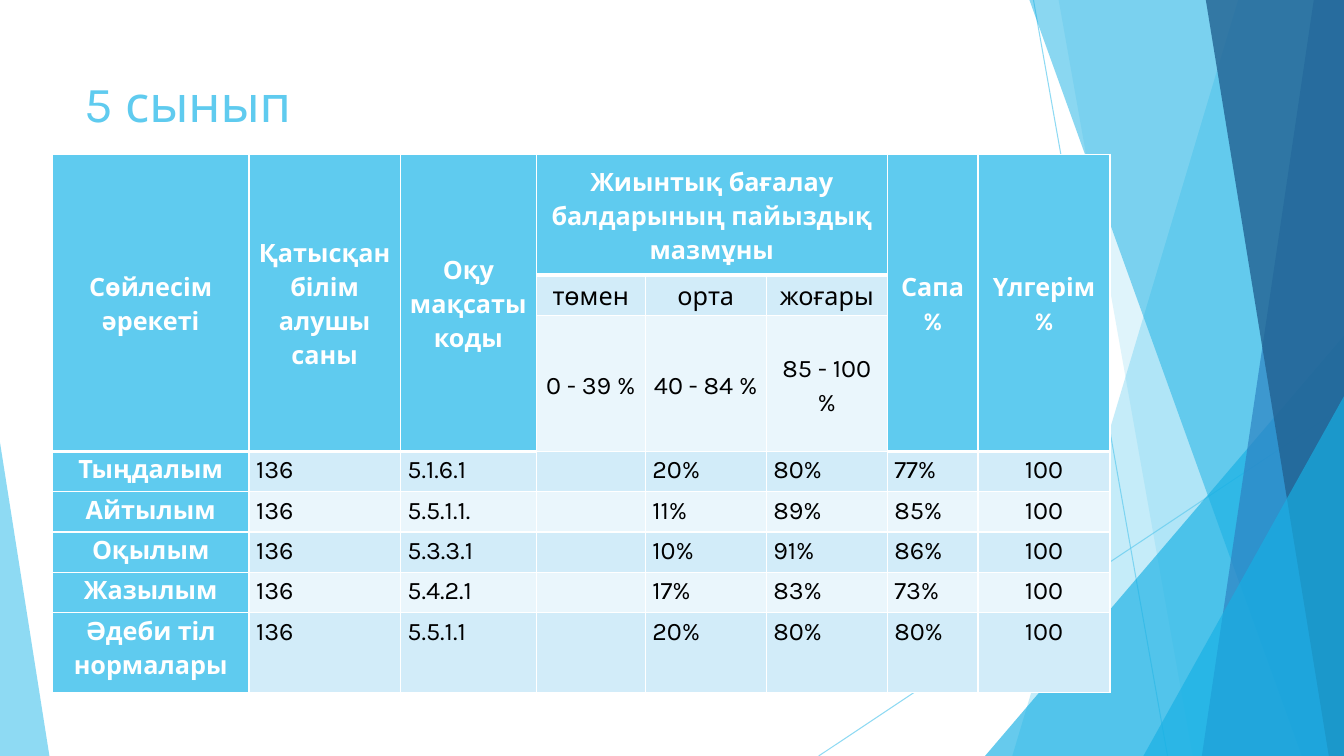
from pptx import Presentation
from pptx.dml.color import RGBColor
from pptx.enum.shapes import MSO_CONNECTOR as Link, MSO_SHAPE as Preset
from pptx.enum.text import MSO_ANCHOR as Anchor, MSO_AUTO_SIZE as Fit, PP_ALIGN as Align
from pptx.oxml.ns import qn
from pptx.util import Inches, Pt
from lxml.etree import SubElement
from dataclasses import dataclass


@dataclass(frozen=True)
class Theme:
    font: str = "Karla"
    sky: str = "5FCBEF"
    cyan: str = "17B0E4"
    blue: str = "2E83C3"
    navy: str = "226292"
    band: str = "D2ECF9"
    pale: str = "EAF6FC"
    white: str = "FFFFFF"
    black: str = "000000"
    title: int = 36
    body: int = 18
    thin: int = 1
    thick: int = 3


look = Theme()
WIDE, HIGH = 13.33, 7.5

TITLE = "5 сынып"
HEAD = ["Сөйлесім әрекеті", "Қатысқан білім алушы саны", "Оқу мақсаты коды",
        "Жиынтық бағалау балдарының пайыздық мазмұны", "", "", "Сапа %", "Үлгерім %"]
LEVELS = ["төмен", "орта", "жоғары"]
RANGES = ["0 - 39 %", "40 - 84 %", "85 - 100 %"]
SKILLS = [
    ("Тыңдалым", "136", "5.1.6.1", "", "20%", "80%", "77%", "100"),
    ("Айтылым", "136", "5.5.1.1.", "", "11%", "89%", "85%", "100"),
    ("Оқылым", "136", "5.3.3.1", "", "10%", "91%", "86%", "100"),
    ("Жазылым", "136", "5.4.2.1", "", "17%", "83%", "73%", "100"),
    ("Әдеби тіл нормалары", "136", "5.5.1.1", "", "20%", "80%", "80%", "100"),
]
COLS = [1.95, 1.5, 1.35, 1.08, 1.2, 1.2, 0.9, 1.31]
ROWS = [1.2, 0.4, 0.79, 0.4, 0.4, 0.4, 0.4, 0.79]
TALL = (0, 1, 2, 6, 7)
HUNG = (1, 2, 6)

RAYS = [(10.25, 0, 11.58, HIGH), (WIDE, 4.03, 8.12, HIGH)]
FACETS = [
    ("cut", (12.28, 10.04), look.sky, 36),
    ("cut", (10.5, 11.83), look.sky, 20),
    ("tri", (9.77, 3.33, 3.56, 1), look.cyan, 66),
    ("cut", (10.21, 12.91), look.cyan, 50),
    ("cut", (13.03, 11.92), look.blue, 70),
    ("cut", (11.96, 13.18), look.navy, 80),
    ("tri", (11.34, 3.93, 1.99, 1), look.cyan, 66),
    ("tri", (0, 4.39, 0.49, 0), look.sky, 70),
]


def paint(fill, tint):
    fill.solid()
    fill.fore_color.rgb = RGBColor.from_string(tint)


def fade(shape, share):
    for clr in shape.element.iter(qn("a:srgbClr")):
        SubElement(clr, qn("a:alpha"), val=str(share * 1000))


def write(para, text, size, tint, bold=False):
    run = para.add_run()
    run.text = text
    run.font.name, run.font.size, run.font.bold = look.font, Pt(size), bold
    run.font.color.rgb = RGBColor.from_string(tint)


def draw_rays(shapes):
    for ray in RAYS:
        line = shapes.add_connector(Link.STRAIGHT, *map(Inches, ray))
        paint(line.line.fill, look.sky)
        line.line.width = Pt(0.75)
        SubElement(line.element.spPr, qn("a:effectLst"))
        fade(line, 70)


def draw_facets(shapes):
    for kind, place, tint, share in FACETS:
        if kind == "cut":
            top, foot = place
            pen = shapes.build_freeform(Inches(top), 0)
            pen.add_line_segments([(Inches(x), Inches(y)) for x, y in
                                   ((WIDE, 0), (WIDE, HIGH), (foot, HIGH))])
            shape = pen.convert_to_shape()
        else:
            x, y, w, tip = place
            shape = shapes.add_shape(Preset.ISOSCELES_TRIANGLE, *map(Inches, (x, y, w, HIGH - y)))
            shape.adjustments[0] = tip
        shape.shadow.inherit = False
        paint(shape.fill, tint)
        shape.line.fill.background()
        fade(shape, share)


def edge(cell, row, col):
    tall = col in TALL
    heavy = {"T": row == (3 if tall else 1), "B": row == 0 or (tall and row == 2)}
    props = cell._tc.get_or_add_tcPr()
    for at, side in enumerate("LRTB"):
        width = look.thick if heavy.get(side) else look.thin
        line = props.makeelement(qn("a:ln" + side), {"w": str(Pt(width))})
        SubElement(SubElement(line, qn("a:solidFill")), qn("a:srgbClr"), val=look.white)
        props.insert(at, line)


def fill_cell(cell, row, col, text):
    head = row < 3
    key = row == 0 or col == 0 or (head and col in TALL)
    paint(cell.fill, look.sky if key else look.band if row % 2 else look.pale)
    edge(cell, row, col)
    cell.margin_left = cell.margin_right = Inches(0.07)
    cell.margin_top = cell.margin_bottom = 0
    cell.vertical_anchor = Anchor.MIDDLE if head else Anchor.TOP
    if not text:
        return
    para = cell.text_frame.paragraphs[0]
    para.line_spacing = 1.15
    para.alignment = Align.CENTER if head or col in (0, 7) else Align.LEFT
    if row == 1 or (row == 0 and col in HUNG) or (not head and col == 0):
        props = para._p.get_or_add_pPr()
        props.set("marL", "0")
        props.set("indent", str(-Inches(0.1)))
    write(para, text, look.body, look.white if key else look.black, key)


def draw_table(shapes):
    sub = [[""] * 3 + part + [""] * 2 for part in (LEVELS, RANGES)]
    grid = [HEAD, *sub, *SKILLS]
    frame = shapes.add_table(len(ROWS), len(COLS),
                             *map(Inches, (0.52, 1.53, sum(COLS), sum(ROWS))))
    table = frame.table
    table.horz_banding = False
    for col, wide in zip(table.columns, COLS):
        col.width = Inches(wide)
    for row, high in zip(table.rows, ROWS):
        row.height = Inches(high)
    for r, line in enumerate(grid):
        for c, text in enumerate(line):
            fill_cell(table.cell(r, c), r, c, text)
    for c in TALL:
        table.cell(0, c).merge(table.cell(2, c))
    table.cell(0, 3).merge(table.cell(0, 5))


def set_title(title):
    title.left, title.top, title.width, title.height = map(Inches, (0.74, 0.67, 9.4, 1.44))
    frame = title.text_frame
    frame.auto_size, frame.word_wrap = Fit.NONE, True
    frame.vertical_anchor = Anchor.TOP
    para = frame.paragraphs[0]
    para.alignment = Align.LEFT
    write(para, TITLE, look.title, look.sky)


def main():
    deck = Presentation()
    deck.slide_width, deck.slide_height = Inches(WIDE), Inches(HIGH)
    slide = deck.slides.add_slide(deck.slide_layouts[5])
    draw_rays(slide.shapes)
    draw_facets(slide.shapes)
    set_title(slide.shapes.title)
    draw_table(slide.shapes)
    deck.save("out.pptx")


if __name__ == "__main__":
    main()
